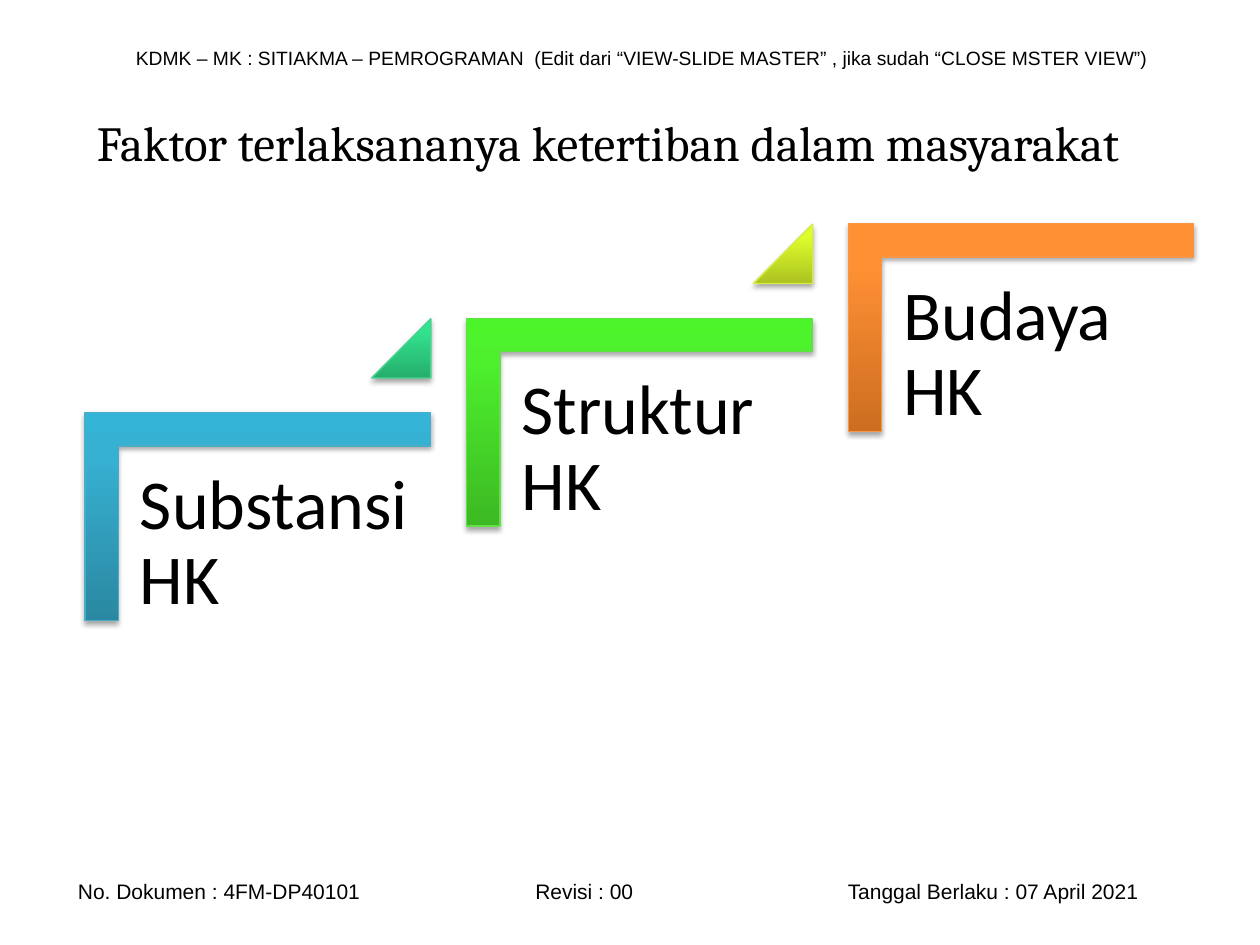
"""Build the slide on the three rising factors of public order."""
from pptx import Presentation
from pptx.dml.color import RGBColor
from pptx.enum.shapes import MSO_SHAPE
from pptx.enum.text import MSO_ANCHOR, PP_ALIGN
from pptx.oxml import parse_xml
from pptx.util import Inches, Pt

CORNER, TRIANGLE = MSO_SHAPE.CORNER, MSO_SHAPE.RIGHT_TRIANGLE
TRIANGLE = MSO_SHAPE.ISOSCELES_TRIANGLE
TOP, MIDDLE = MSO_ANCHOR.TOP, MSO_ANCHOR.MIDDLE
LEFT, JUSTIFY = PP_ALIGN.LEFT, PP_ALIGN.JUSTIFY
BLACK = RGBColor(0x00, 0x00, 0x00)
NS = 'xmlns:a="http://schemas.openxmlformats.org/drawingml/2006/main"'
COL, ROW = 3.03, 0.75
FOOTER_TABS = (0.32, 3.95, 6.43)

STEPS = [
    ("Substansi HK", RGBColor(0x4B, 0xAC, 0xC6), ("2A88A2", "37B1D2", "34B4D6")),
    ("Struktur HK", RGBColor(0x60, 0xE1, 0x46), ("3CB923", "4EF02E", "4CF52A")),
    ("Budaya HK", RGBColor(0xF7, 0x96, 0x46), ("CC6E20", "FF9034", "FF9136")),
]
RISES = [
    (RGBColor(0x48, 0xD4, 0x91), ("26AE6D", "32E28D", "2EE68E")),
    (RGBColor(0xD5, 0xEC, 0x46), ("ACC321", "DFFD2B", "E1FF2B")),
]


def add_text(text, box, size, font, align=LEFT, anchor=TOP, inset=None, spacing=None, tabs=()):
    s = slide.shapes.add_textbox(*map(Inches, box))
    tf = s.text_frame
    tf.word_wrap = True
    tf.vertical_anchor = anchor
    if inset:
        tf.margin_left = tf.margin_right = tf.margin_top = tf.margin_bottom = Inches(inset)
    p = tf.paragraphs[0]
    p.alignment = align
    if tabs:
        stops = "".join(f'<a:tab pos="{Inches(t)}" algn="l"/>' for t in tabs)
        p._p.get_or_add_pPr().append(parse_xml(f"<a:tabLst {NS}>{stops}</a:tabLst>"))
    if spacing:
        p.line_spacing = spacing
    r = p.add_run()
    r.text = text
    r.font.size, r.font.name = Pt(size), font
    r.font.color.rgb = BLACK


def add_figure(kind, box, line, shades, adjustments, rotation=0):
    s = slide.shapes.add_shape(kind, *map(Inches, box))
    s.rotation = rotation
    for i, value in enumerate(adjustments):
        s.adjustments[i] = value
    s.line.color.rgb, s.line.width = line, Pt(0.75)
    s.shadow.inherit = False
    stops = "".join(f'<a:gs pos="{pos}000"><a:srgbClr val="{shade}"/></a:gs>'
                    for pos, shade in zip((0, 80, 100), shades))
    sp = s._element.spPr
    sp.insert(2, parse_xml(f'<a:gradFill {NS} rotWithShape="0"><a:gsLst>{stops}</a:gsLst>'
                           '<a:lin ang="16200000" scaled="0"/></a:gradFill>'))
    sp[-1].append(parse_xml(
        f'<a:outerShdw {NS} blurRad="{Pt(3.1)}" dist="{Pt(1.8)}" dir="5400000" rotWithShape="0">'
        '<a:srgbClr val="000000"><a:alpha val="35000"/></a:srgbClr></a:outerShdw>'))


prs = Presentation()
prs.slide_width, prs.slide_height = Inches(10), Inches(7.5)
slide = prs.slides.add_slide(prs.slide_layouts[6])

add_text("KDMK – MK : SITIAKMA – PEMROGRAMAN  (Edit dari “VIEW-SLIDE MASTER” , "
         "jika sudah “CLOSE MSTER VIEW”)",
         (0.98, 0.31, 8.35, 0.29), 11, "Arial", align=JUSTIFY, anchor=MIDDLE)
add_text("\tNo. Dokumen : 4FM-DP40101\tRevisi : 00\tTanggal Berlaku : 07 April 2021",
         (0.2, 6.92, 9.45, 0.3), 12, "Arial", align=JUSTIFY, anchor=MIDDLE, tabs=FOOTER_TABS)
add_text("Faktor terlaksananya ketertiban dalam masyarakat", (0.67, 0.84, 9, 0.63), 28, "Cambria")

for i, (label, line, shades) in enumerate(STEPS):
    x, y = i * COL, -i * ROW
    add_figure(CORNER, (1.22 + x, 2.73 + y, 1.65, 2.74), line, shades, (0.16, 0.16), rotation=90)
    add_text(label, (0.94 + x, 3.55 + y, 2.48, 2.17), 40, "Calibri", inset=0.17, spacing=0.9)

for i, (line, shades) in enumerate(RISES):
    add_figure(TRIANGLE, (2.95 + i * COL, 2.53 - i * ROW, 0.47, 0.47), line, shades, (1,))

prs.save("out.pptx")
